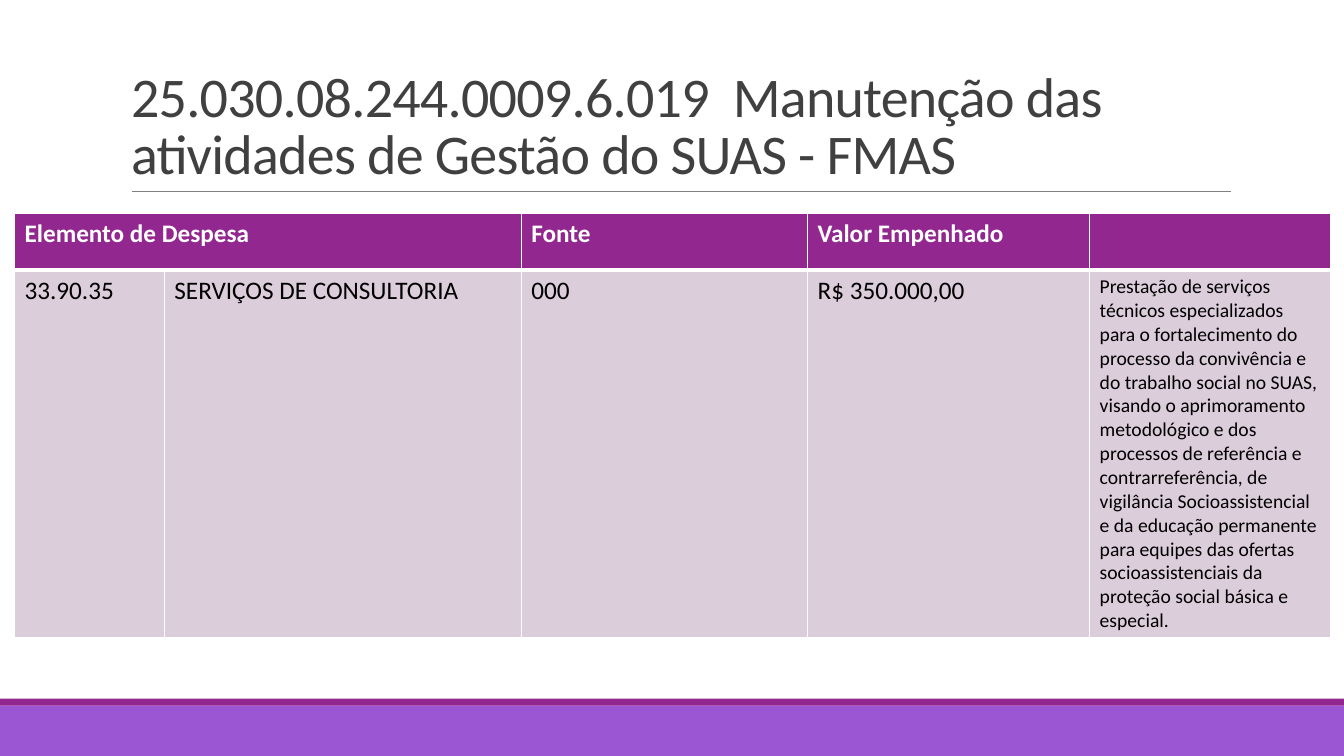
from lxml import etree
from pptx import Presentation
from pptx.dml.color import RGBColor
from pptx.enum import shapes, text
from pptx.oxml import ns
from pptx.util import Pt

PURPLE = RGBColor(0x92, 0x27, 0x8F)
VIOLET = RGBColor(0x9B, 0x57, 0xD3)
LILAC = RGBColor(0xDC, 0xCD, 0xDB)
WHITE = RGBColor(0xFF, 0xFF, 0xFF)
BLACK = RGBColor(0, 0, 0)
GRAY = RGBColor(0x80, 0x80, 0x80)
DARK_GRAY = RGBColor(0x40, 0x40, 0x40)
FONT = "Calibri"


def format_font(font, size, color, bold=False):
    font.name, font.size, font.bold = FONT, Pt(size), bold
    font.color.rgb = color


def add_borders(cell, bottom_width):
    """Draw white borders; call before filling, as borders precede the fill in XML."""
    properties = cell._tc.get_or_add_tcPr()
    for side, width in (("lnL", 1), ("lnR", 1), ("lnT", 1), ("lnB", bottom_width)):
        line = etree.SubElement(properties, ns.qn(f"a:{side}"), w=str(Pt(width)))
        fill = etree.SubElement(line, ns.qn("a:solidFill"))
        etree.SubElement(fill, ns.qn("a:srgbClr"), val=str(WHITE))


presentation = Presentation()
presentation.slide_width, presentation.slide_height = Pt(960), Pt(540)
slide = presentation.slides.add_slide(presentation.slide_layouts[5])

# Footer bands and title rule
for top, height, color in ((504, 36, VIOLET), (499, 5, PURPLE)):
    band = slide.shapes.add_shape(
        shapes.MSO_SHAPE.RECTANGLE, 0, Pt(top), Pt(960), Pt(height))
    band.shadow.inherit = False
    band.fill.solid()
    band.fill.fore_color.rgb = color
    band.line.fill.background()

rule = slide.shapes.add_connector(
    shapes.MSO_CONNECTOR.STRAIGHT, Pt(94.3), Pt(136.6), Pt(879), Pt(136.6))
rule.line.color.rgb = GRAY
rule.line.width = Pt(0.5)
etree.SubElement(rule._element.spPr, ns.qn("a:effectLst"))

# Title
title = slide.shapes.title
title.left, title.top, title.width, title.height = Pt(86.4), Pt(22.3), Pt(792), Pt(114.3)
frame = title.text_frame
frame.text = "25.030.08.244.0009.6.019  Manutenção das atividades de Gestão do SUAS - FMAS"
frame.word_wrap = True
frame.auto_size = text.MSO_AUTO_SIZE.NONE
frame.vertical_anchor = text.MSO_ANCHOR.BOTTOM
paragraph = frame.paragraphs[0]
paragraph.alignment = text.PP_ALIGN.LEFT
paragraph.line_spacing = 0.85
title_font = paragraph.runs[0].font
format_font(title_font, 40, DARK_GRAY)
title_font._element.set("spc", "-50")

# Expense table
COLUMN_WIDTHS = (107, 255, 204.5, 201.5, 172)
ROW_HEIGHTS = (40.3, 262.5)
ROWS = (
    ("Elemento de Despesa", "", "Fonte", "Valor Empenhado", ""),
    ("33.90.35", "SERVIÇOS DE CONSULTORIA", "000", "R$ 350.000,00",
     "Prestação de serviços técnicos especializados para o fortalecimento do "
     "processo da convivência e do trabalho social no SUAS, visando o "
     "aprimoramento metodológico e dos processos de referência e "
     "contrarreferência, de vigilância Socioassistencial e da educação "
     "permanente para equipes das ofertas socioassistenciais da proteção "
     "social básica e especial."),
)
table = slide.shapes.add_table(
    len(ROWS), len(COLUMN_WIDTHS), Pt(10.4), Pt(152.6),
    Pt(sum(COLUMN_WIDTHS)), Pt(sum(ROW_HEIGHTS))).table
for column, width in zip(table.columns, COLUMN_WIDTHS):
    column.width = Pt(width)
for row, height in zip(table.rows, ROW_HEIGHTS):
    row.height = Pt(height)

for row_index, values in enumerate(ROWS):
    header = row_index == 0
    for column_index, value in enumerate(values):
        cell = table.cell(row_index, column_index)
        add_borders(cell, 3 if header else 1)
        cell.fill.solid()
        cell.fill.fore_color.rgb = PURPLE if header else LILAC
        if value:
            cell.text = value
            description = not header and column_index == len(values) - 1
            format_font(cell.text_frame.paragraphs[0].runs[0].font,
                        14 if description else 18, WHITE if header else BLACK, header)
table.cell(0, 0).merge(table.cell(0, 1))

presentation.save("out.pptx")
